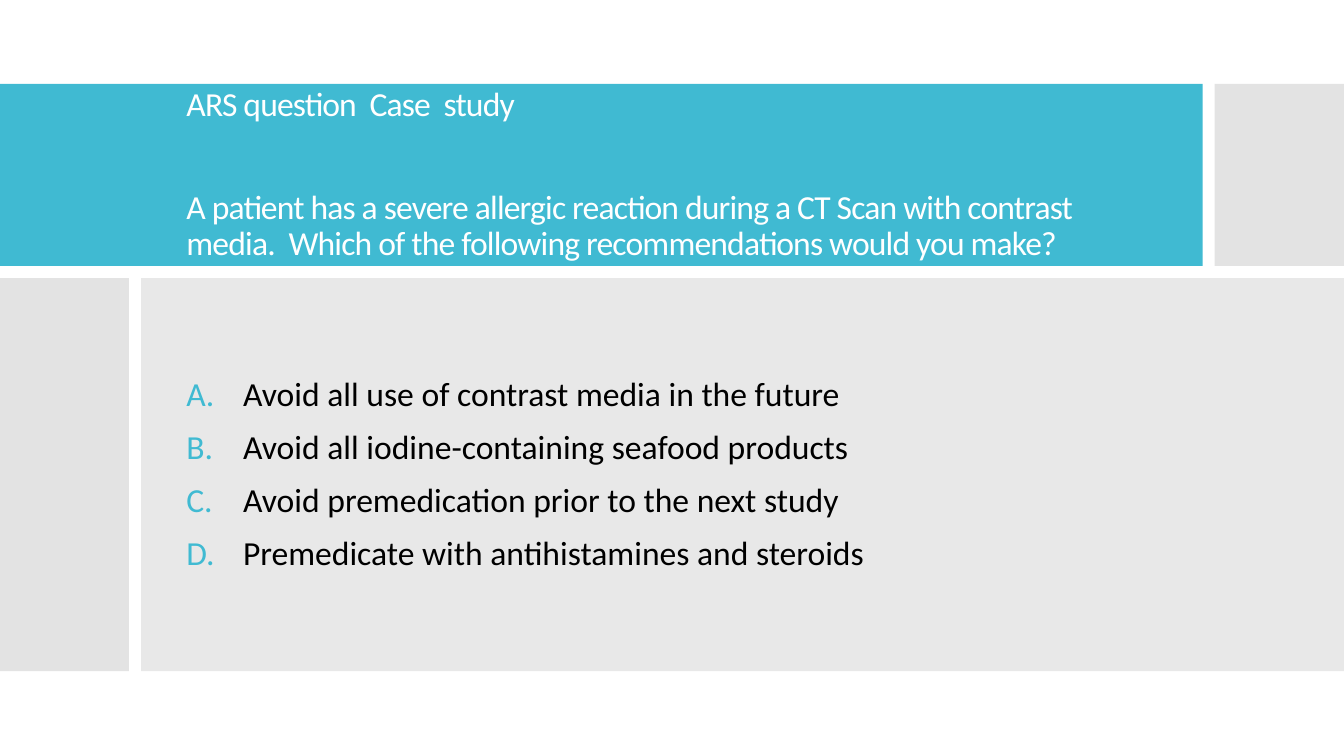
from dataclasses import dataclass

from lxml.etree import SubElement
from pptx import Presentation
from pptx.dml.color import RGBColor
from pptx.enum.shapes import MSO_SHAPE
from pptx.enum.text import MSO_ANCHOR, MSO_AUTO_SIZE, PP_ALIGN
from pptx.oxml.ns import qn
from pptx.util import Pt


@dataclass(frozen=True)
class Theme:
    """Colours, font and type size of the slide."""
    teal: str = "40BAD2"
    tile: str = "C8C8C8"
    panel: str = "D9D9D9"
    white: str = "FFFFFF"
    black: str = "000000"
    font: str = "Calibri"
    size: float = 24


THEME = Theme()
WIDTH, HEIGHT = 960, 540
GAP = 8.64
INSET = 126
TEXT_WIDTH = 707
TITLE = (
    "ARS question  Case  study\v\v"
    "A patient has a severe allergic reaction during a CT Scan with contrast media.  "
    "Which of the following recommendations would you make?"
)
CHOICES = [
    "Avoid all use of contrast media in the future",
    "Avoid all iodine-containing seafood products",
    "Avoid premedication prior to the next study",
    "Premedicate with antihistamines and steroids",
]


def add_block(slide, box, color, alpha=100):
    """Draw a borderless rectangle with the given opacity in percent."""
    block = slide.shapes.add_shape(MSO_SHAPE.RECTANGLE, *map(Pt, box))
    block.shadow.inherit = False
    block.line.fill.background()
    block.fill.solid()
    block.fill.fore_color.rgb = RGBColor.from_string(color)
    if alpha < 100:
        tint = block.fill._xPr.find(".//" + qn("a:srgbClr"))
        SubElement(tint, qn("a:alpha"), val=str(alpha * 1000))


def style_text(frame, color):
    """Set wrapping, anchor, spacing and font of a text frame."""
    frame.word_wrap = True
    frame.auto_size = MSO_AUTO_SIZE.NONE
    frame.vertical_anchor = MSO_ANCHOR.MIDDLE
    for para in frame.paragraphs:
        para.alignment = PP_ALIGN.LEFT
        para.line_spacing = 0.9
        for run in para.runs:
            run.font.name = THEME.font
            run.font.size = Pt(THEME.size)
            run.font.color.rgb = RGBColor.from_string(color)


def add_header(slide, box):
    """Build the title band and the tile at its right."""
    left, top, width, height = box
    band = 859
    start = left + band + GAP
    add_block(slide, (left, top, band, height), THEME.teal)
    add_block(slide, (start, top, left + width - start, height), THEME.tile, 50)

    title = slide.shapes.title
    slide.shapes.element.append(title.element)
    title.left, title.width = Pt(left + INSET), Pt(TEXT_WIDTH)
    title.top, title.height = Pt(top + 26), Pt(height - 52)
    title.text_frame.text = TITLE
    style_text(title.text_frame, THEME.white)
    for run in title.text_frame.paragraphs[0].runs:
        run.font._element.set("spc", "-60")


def add_choices(slide, box):
    """Build the side tile and the panel with lettered choices."""
    left, top, width, height = box
    side = 92.16
    start = left + side + GAP
    add_block(slide, (left, top, side, height), THEME.tile, 50)
    add_block(slide, (start, top, left + width - start, height), THEME.panel, 60)

    area = (left + INSET, top, TEXT_WIDTH, height)
    frame = slide.shapes.add_textbox(*map(Pt, area)).text_frame
    frame.text = "\n".join(CHOICES)
    for index, para in enumerate(frame.paragraphs):
        props = para._p.get_or_add_pPr()
        props.set("marL", str(Pt(40.5)))
        props.set("indent", str(Pt(-40.5)))
        tint = SubElement(props, qn("a:buClr"))
        SubElement(tint, qn("a:srgbClr"), val=THEME.teal)
        SubElement(props, qn("a:buFont"), typeface=THEME.font)
        SubElement(props, qn("a:buAutoNum"), type="alphaUcPeriod")
        para.space_before = Pt(12 if index else 0)
    style_text(frame, THEME.black)


def main():
    """Build and save the slide."""
    deck = Presentation()
    deck.slide_width, deck.slide_height = Pt(WIDTH), Pt(HEIGHT)
    slide = deck.slides.add_slide(deck.slide_layouts[5])
    top, head, foot = 60, 130, 479.5
    body = top + head + GAP
    add_header(slide, (0, top, WIDTH, head))
    add_choices(slide, (0, body, WIDTH, foot - body))
    deck.save("out.pptx")


if __name__ == "__main__":
    main()
